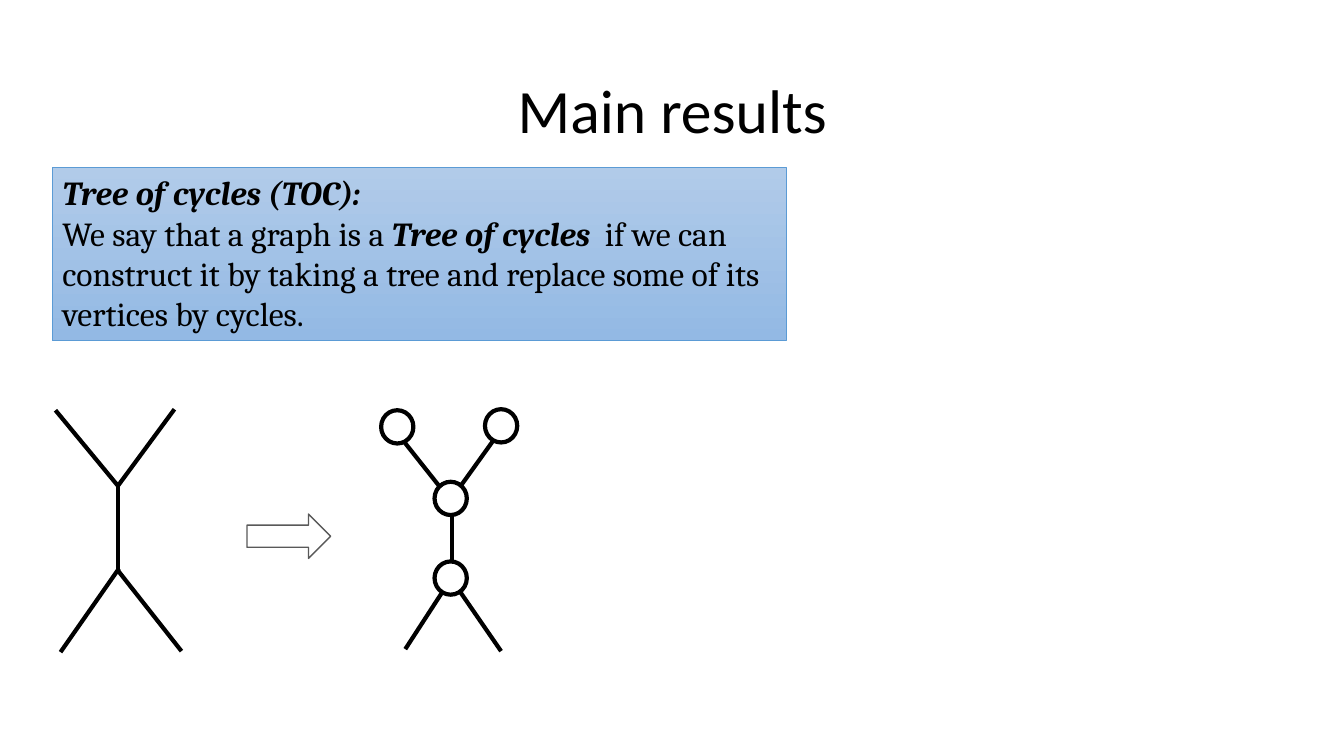
from lxml import etree
from pptx import Presentation, util as u
from pptx.dml.color import RGBColor
from pptx.enum import shapes, text
from pptx.oxml import ns

BLACK = RGBColor(0, 0, 0)
WHITE = RGBColor(255, 255, 255)
GREY = RGBColor(0x59, 0x59, 0x59)
BLUE = RGBColor(0x5B, 0x9B, 0xD5)
LIGHT = RGBColor(0xB1, 0xCB, 0xE9)
DEEP = RGBColor(0x93, 0xB9, 0xE4)

TREE = [(0.55, 4.07, 1.17, 4.82), (1.73, 4.06, 1.17, 4.82),
        (1.17, 4.78, 1.17, 5.67), (1.17, 5.66, 1.8, 6.46),
        (1.18, 5.64, 0.6, 6.47)]
LINKS = [(3.99, 4.36, 4.41, 4.89), (4.9, 4.36, 4.52, 4.89),
         (4.48, 5.11, 4.48, 5.74), (4.57, 5.88, 4.97, 6.46),
         (4.39, 5.87, 4.02, 6.44)]
RINGS = [(4.31, 4.78), (4.81, 4.06), (3.78, 4.07), (4.31, 5.57)]
WORDS = [[("Tree of cycles (TOC):", True)],
         [("We say that a graph is a ", False), ("Tree of cycles  ", True),
          ("if we can construct it by taking a tree and replace "
           "some of its vertices by cycles.", False)]]


def apply(item, form):
    for name, value in form.items():
        setattr(item, name, value)


class Board:
    """Holds the style and the current slide, and draws each kind of element."""

    head = {"name": "Calibri", "size": u.Pt(44)}
    prose = {"name": "Cambria", "size": u.Pt(24)}
    frame = {"word_wrap": True, "vertical_anchor": text.MSO_ANCHOR.TOP,
             "auto_size": text.MSO_AUTO_SIZE.SHAPE_TO_FIT_TEXT}

    def __init__(self, deck):
        self.slide = deck.slides.add_slide(deck.slide_layouts[5])

    def phrase(self, para, words, form):
        run = para.add_run()
        run.text = words
        apply(run.font, form)
        run.font.color.rgb = BLACK

    def title(self, words, *box):
        shape = self.slide.shapes.title
        apply(shape, dict(zip(("left", "top", "width", "height"), map(u.Inches, box))))
        shape.text_frame.vertical_anchor = text.MSO_ANCHOR.MIDDLE
        para = shape.text_frame.paragraphs[0]
        apply(para, {"alignment": text.PP_ALIGN.CENTER, "line_spacing": 0.9})
        self.phrase(para, words, self.head)

    def group(self):
        return self.slide.shapes.add_group_shape().shapes

    def stroke(self, item, color, width):
        item.line.color.rgb = color
        item.line.width = u.Pt(width)

    def shape(self, kind, box, color, width, fill=None, home=None):
        home = home or self.slide.shapes
        item = home.add_shape(kind, *map(u.Inches, box))
        item.shadow.inherit = False
        if fill is None:
            item.fill.background()
        else:
            item.fill.solid()
            item.fill.fore_color.rgb = fill
        self.stroke(item, color, width)
        return item

    def panel(self, paras, *box):
        item = self.shape(shapes.MSO_SHAPE.RECTANGLE, box, BLUE, 0.5)
        item.fill.gradient()
        item.fill.gradient_angle = 270
        for stop, color in zip(item.fill.gradient_stops, (LIGHT, DEEP)):
            stop.color.rgb = color
        frame = item.text_frame
        apply(frame, self.frame)
        for i, runs in enumerate(paras):
            para = frame.add_paragraph() if i else frame.paragraphs[0]
            para.alignment = text.PP_ALIGN.LEFT
            for words, strong in runs:
                self.phrase(para, words, {**self.prose, "bold": strong, "italic": strong})

    def edges(self, home, ends):
        for end in ends:
            edge = home.add_connector(shapes.MSO_CONNECTOR.STRAIGHT, *map(u.Inches, end))
            self.stroke(edge, BLACK, 3)
            etree.SubElement(edge._element.spPr, ns.qn("a:effectLst"))

    def rings(self, home, spots):
        for left, top in spots:
            self.shape(shapes.MSO_SHAPE.OVAL, (left, top, 0.32, 0.33),
                       BLACK, 3, WHITE, home)


def main():
    deck = Presentation()
    apply(deck, {"slide_width": u.Inches(13.33), "slide_height": u.Inches(7.5)})
    board = Board(deck)
    board.title("Main results", 0.92, 0.4, 11.5, 1.45)
    board.panel(WORDS, 0.52, 1.66, 7.28, 1.72)
    board.shape(shapes.MSO_SHAPE.RIGHT_ARROW, (2.45, 5.1, 0.83, 0.44), GREY, 1)
    board.edges(board.group(), TREE)
    cycles = board.group()
    board.edges(cycles, LINKS)
    board.rings(cycles, RINGS)
    deck.save("out.pptx")


if __name__ == "__main__":
    main()
